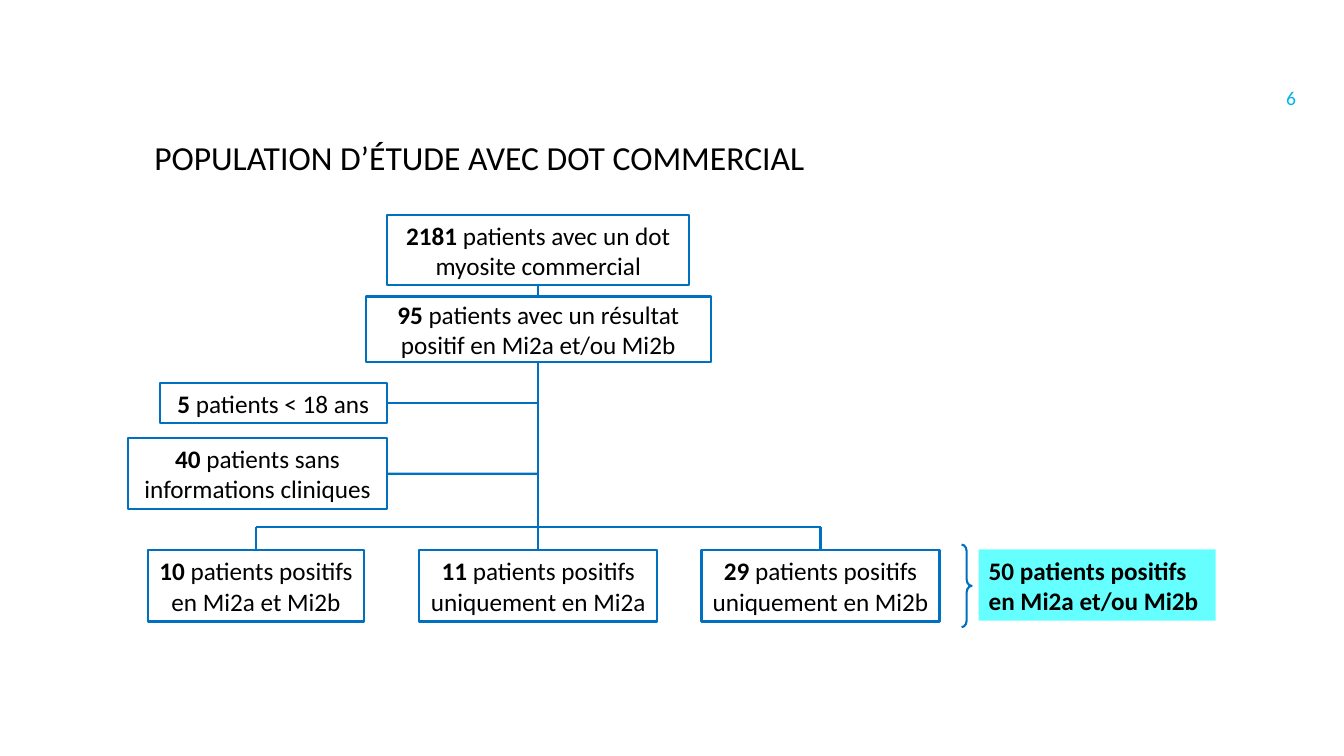
from dataclasses import dataclass

import pptx
import pptx.dml.color
import pptx.enum.shapes
import pptx.enum.text
import pptx.oxml.xmlchemy
import pptx.util
from lxml import etree
from pptx.oxml.ns import qn

Pt = pptx.util.Pt
RGB = pptx.dml.color.RGBColor.from_string
ALIGN = pptx.enum.text.PP_ALIGN
ANCHOR = pptx.enum.text.MSO_ANCHOR
SHAPE = pptx.enum.shapes.MSO_SHAPE


@dataclass(frozen=True)
class Theme:
    font: str = "Calibri"
    ink: str = "000000"
    line: str = "0070C0"
    number: str = "00B5EF"
    highlight: str = "66FFFF"
    title_size: int = 24
    body_size: int = 18
    number_size: int = 14
    line_width: float = 1.5


THEME = Theme()


def write(holder, paragraphs, size=THEME.body_size, color=THEME.ink,
          align=ALIGN.CENTER, wrap=True):
    """Fill a shape with paragraphs, each a list of (text, bold) spans."""
    frame = holder.text_frame
    frame_format = {"word_wrap": wrap, "vertical_anchor": ANCHOR.MIDDLE,
                    "auto_size": pptx.enum.text.MSO_AUTO_SIZE.NONE}
    for name, value in frame_format.items():
        setattr(frame, name, value)
    for index, spans in enumerate(paragraphs):
        para = frame.add_paragraph() if index else frame.paragraphs[0]
        para.alignment = align
        for text, bold in spans:
            span = para.add_run()
            span.text = text
            font_format = {"name": THEME.font, "size": Pt(size), "bold": bold}
            for name, value in font_format.items():
                setattr(span.font, name, value)
            span.font.color.rgb = RGB(color)


def add_shape(page, kind, left, top, width, height, fill=None, outline=True):
    shape = page.shapes.add_shape(kind, Pt(left), Pt(top), Pt(width), Pt(height))
    shape.shadow.inherit = False
    if fill:
        shape.fill.solid()
        shape.fill.fore_color.rgb = RGB(fill)
    else:
        shape.fill.background()
    if outline:
        shape.line.color.rgb = RGB(THEME.line)
        shape.line.width = Pt(THEME.line_width)
    else:
        shape.line.fill.background()
    return shape


def add_step(page, center, top, width, height, count, *lines):
    """A flow chart box: bold count, then its label on one or more lines."""
    box = add_shape(page, SHAPE.RECTANGLE, center - width / 2, top, width, height)
    paragraphs = [[(count, True), (lines[0], False)]]
    paragraphs += [[(line, False)] for line in lines[1:]]
    write(box, paragraphs, wrap=len(lines) == 1)
    return box


def add_line(page, start, end, begin=None, finish=None):
    """A straight line; begin and finish are (box, side) joints."""
    line = page.shapes.add_connector(
        pptx.enum.shapes.MSO_CONNECTOR.STRAIGHT, *map(Pt, start + end))
    line.line.color.rgb = RGB(THEME.line)
    line.line.width = Pt(THEME.line_width)
    etree.SubElement(line._element.spPr, qn("a:effectLst"))
    if begin:
        line.begin_connect(*begin)
    if finish:
        line.end_connect(*finish)


def add_heading(page, left, top, width, height):
    title = page.shapes.title
    place = {"left": left, "top": top, "width": width, "height": height}
    for name, value in place.items():
        setattr(title, name, Pt(value))
    write(title, [[("POPULATION D’ÉTUDE AVEC DOT COMMERCIAL", False)]],
          size=THEME.title_size, align=ALIGN.LEFT)


def add_page_number(page, left, top, width, height):
    box = page.shapes.add_textbox(Pt(left), Pt(top), Pt(width), Pt(height))
    write(box, [[("6", False)]], size=THEME.number_size,
          color=THEME.number, align=ALIGN.LEFT)


def add_flow_chart(page, left, top):
    trunk = left + 293
    bus = top + 223
    groups_top = top + 239.5
    box_height = 51

    # Selection steps on the trunk
    tested = add_step(page, trunk, top, 216, 50.4,
                      "2181", " patients avec un dot myosite commercial")
    positive = add_step(page, trunk, top + 58.3, 246.2, 46.8,
                        "95", " patients avec un résultat positif en Mi2a et/ou Mi2b")
    add_line(page, (trunk, top + 50.4), (trunk, top + 58.3),
             (tested, 2), (positive, 0))
    add_line(page, (trunk, top + 105.1), (trunk, bus), (positive, 2))

    # Exclusions, right-aligned beside the trunk
    exclusions = [
        (134.5, 162.5, 29, "5", " patients < 18 ans"),
        (184.9, 185, box_height, "40", " patients sans informations cliniques"),
    ]
    edge = trunk - 108
    for middle, width, height, count, label in exclusions:
        box = add_step(page, edge - width / 2, top + middle - height / 2,
                       width, height, count, label)
        add_line(page, (edge, top + middle), (trunk, top + middle), (box, 3))

    # Final groups, evenly spaced under the bus
    spacing = 201.6
    groups = [
        (154, "10", "en Mi2a et Mi2b"),
        (170, "11", "uniquement en Mi2a"),
        (170, "29", "uniquement en Mi2b"),
    ]
    add_line(page, (trunk - spacing, bus), (trunk + spacing, bus))
    for index, (width, count, label) in enumerate(groups):
        center = trunk + (index - 1) * spacing
        box = add_step(page, center, groups_top, width, box_height,
                       count, " patients positifs", label)
        add_line(page, (center, bus), (center, groups_top), finish=(box, 0))

    # Total behind the brace
    brace = add_shape(page, SHAPE.RIGHT_BRACE, left + 595.4, groups_top - 4, 7.2, 59)
    brace.adjustments[0] = 0.65
    total = add_shape(page, SHAPE.RECTANGLE, left + 607.6, groups_top - 0.6,
                      169.2, box_height, fill=THEME.highlight, outline=False)
    write(total, [[("50 patients positifs en Mi2a et/ou Mi2b", True)]],
          align=ALIGN.LEFT)


def main():
    deck = pptx.Presentation()
    deck.slide_width, deck.slide_height = Pt(960), Pt(540)
    page = deck.slides.add_slide(deck.slide_layouts[5])
    add_page_number(page, 911.5, 46, 48, 48)
    add_heading(page, 103, 93, 798, 38)
    add_flow_chart(page, 91.5, 153.5)
    deck.save("out.pptx")


if __name__ == "__main__":
    main()
